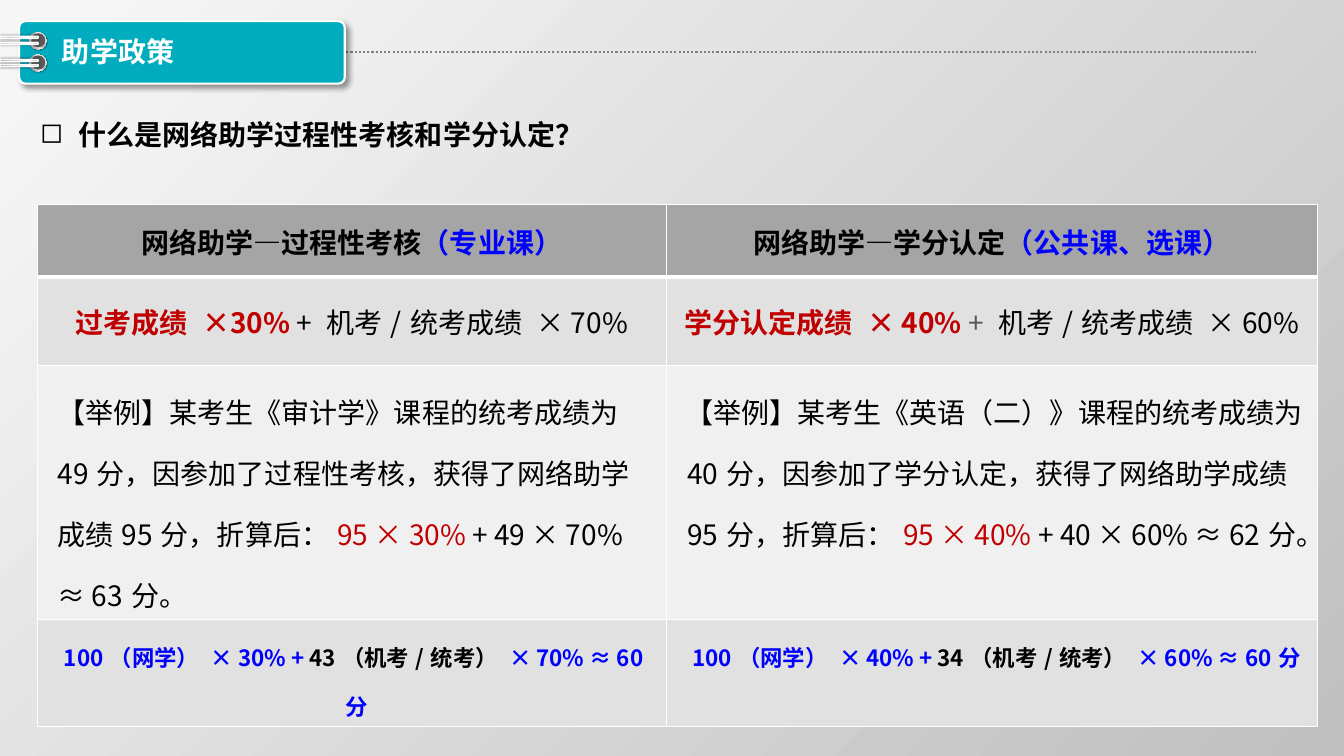
from dataclasses import dataclass

from lxml.etree import SubElement
from pptx import Presentation
from pptx.dml.color import RGBColor
from pptx.enum.dml import MSO_LINE
from pptx.enum.shapes import MSO_CONNECTOR, MSO_SHAPE
from pptx.enum.text import MSO_ANCHOR, PP_ALIGN
from pptx.oxml.ns import qn
from pptx.util import Inches, Pt


@dataclass(frozen=True)
class Theme:
    font: str = "Noto Sans CJK SC"
    body: int = 20
    small: int = 16
    black: str = "000000"
    white: str = "FFFFFF"
    blue: str = "0000FF"
    red: str = "C00000"
    gray: str = "595959"
    rule: str = "808080"
    badge: str = "01ACBE"
    header: str = "A5A5A5"
    dark_row: str = "E1E1E1"
    light_row: str = "F0F0F0"
    backdrop: tuple = ((3, "F7F7F7"), (100, "BFBFBF"))
    ring: tuple = ((0, "FFFFFF"), (17, "A6A6A6"), (35, "F2F2F2"),
                   (55, "A6A6A6"), (75, "F2F2F2"), (100, "A6A6A6"))
    rod: tuple = ((0, "808080"), (23, "A6A6A6"), (52, "D9D9D9"),
                  (74, "FFFFFF"), (100, "A6A6A6"))


def grid(*cells):
    """Lengths on a grid whose columns and rows are a tenth of an inch."""
    return [Inches(cell / 10) for cell in cells]


def add_color(parent, color):
    return SubElement(parent, qn("a:srgbClr"), val=color)


def paint_gradient(fill, owner, stops, angle):
    fill.gradient()
    fill.gradient_angle = 360 - angle
    stop_list = next(owner.iter(qn("a:gsLst")))
    stop_list.clear()
    for position, color in stops:
        add_color(SubElement(stop_list, qn("a:gs"), pos=str(position * 1000)), color)


def add_shadow(shape, blur, distance, angle):
    effects = shape._element.spPr.find(qn("a:effectLst"))
    shadow = SubElement(effects, qn("a:outerShdw"), blurRad=str(Pt(blur)),
                        dist=str(Pt(distance)), dir=str(angle * 60000),
                        algn="ctr", rotWithShape="0")
    SubElement(add_color(shadow, "000000"), qn("a:alpha"), val="40000")


class SlideBuilder:
    def __init__(self, deck, theme):
        self.theme = theme
        self.page = deck.slides.add_slide(deck.slide_layouts[5])
        self.shapes = self.page.shapes

    def background(self):
        paint_gradient(self.page.background.fill, self.page._element,
                       self.theme.backdrop, 45)

    def set_paragraph(self, para, spans, size, align=PP_ALIGN.LEFT, spacing=None,
                      margin=0, indent=0, bullet=None):
        """Fill a paragraph with (text, color, bold) spans."""
        para.alignment = align
        para.font.name, para.font.size = self.theme.font, Pt(size)
        if spacing:
            para.line_spacing = spacing
        properties = para._p.get_or_add_pPr()
        left, first = grid(margin, indent)
        properties.set("marL", str(left))
        properties.set("indent", str(first))
        defaults = properties.find(qn("a:defRPr"))
        SubElement(defaults, qn("a:ea"), typeface=self.theme.font)
        if bullet:
            mark = SubElement(properties, qn("a:buChar"), char=bullet)
            defaults.addprevious(mark)
        for text, color, bold in spans:
            span = para.add_run()
            span.text = text
            span.font.bold = bold
            span.font.color.rgb = RGBColor.from_string(color)

    def title(self, place, text):
        box = self.shapes.title
        box.left, box.top, box.width, box.height = grid(*place)
        frame = box.text_frame
        frame.vertical_anchor = MSO_ANCHOR.MIDDLE
        frame.margin_left = grid(1.55)[0]
        self.set_paragraph(frame.paragraphs[0], [(text, self.theme.white, True)],
                           self.theme.body, spacing=0.9)
        self.shapes._spTree.append(box._element)

    def text(self, place, spans, **style):
        frame = self.shapes.add_textbox(*grid(*place)).text_frame
        frame.word_wrap = True
        self.set_paragraph(frame.paragraphs[0], spans, self.theme.body, **style)

    def dotted_line(self, left, right, top):
        line = self.shapes.add_connector(MSO_CONNECTOR.STRAIGHT,
                                         *grid(left, top, right, top))
        line.line.color.rgb = RGBColor.from_string(self.theme.rule)
        line.line.width = Pt(1.5)
        line.line.dash_style = MSO_LINE.ROUND_DOT
        SubElement(line._element.spPr, qn("a:effectLst"))

    def shape(self, kind, place, paint, angle=0, rotation=0, corner=None,
              outline=0, shadow=None):
        """Draw a preset shape; paint is a color or a tuple of gradient stops."""
        shape = self.shapes.add_shape(kind, *grid(*place))
        shape.rotation = rotation
        shape.shadow.inherit = False
        if corner is not None:
            shape.adjustments[0] = corner
        if isinstance(paint, str):
            shape.fill.solid()
            shape.fill.fore_color.rgb = RGBColor.from_string(paint)
        else:
            paint_gradient(shape.fill, shape._element, paint, angle)
        if outline:
            shape.line.color.rgb = RGBColor.from_string(self.theme.white)
            shape.line.width = Pt(outline)
        else:
            shape.line.fill.background()
        if shadow:
            add_shadow(shape, *shadow)

    def badge(self):
        """The tab behind the title, held by two rings and four rods."""
        self.shape(MSO_SHAPE.ROUNDED_RECTANGLE, (1.9, 2.1, 32.3, 6.2),
                   self.theme.badge, corner=0.1, outline=1.5, shadow=(4, 3, 45))
        for top in (5.4, 3.2):
            self.shape(MSO_SHAPE.OVAL, (2.9, top, 1.7, 1.7), self.theme.ring,
                       angle=45, rotation=270, shadow=(1, 1, 45))
            self.shape(MSO_SHAPE.OVAL, (3.1, top + 0.1, 1.4, 1.4), self.theme.gray)
        for top in (4.6, 4.1, 2.4, 1.8):
            self.shape(MSO_SHAPE.ROUNDED_RECTANGLE, (1.8, top, 0.2, 3.8),
                       self.theme.rod, angle=90, rotation=270, corner=0.5,
                       outline=1, shadow=(2, 0, 0))

    def borders(self, cell, top, bottom):
        properties = cell._tc.get_or_add_tcPr()
        for side, width in (("L", 1), ("R", 1), ("T", top), ("B", bottom)):
            edge = SubElement(properties, qn(f"a:ln{side}"), w=str(Pt(width)))
            add_color(SubElement(edge, qn("a:solidFill")), self.theme.white)

    def table(self, left, top, widths, rows):
        """Each row is (height, fill, size, anchor, styles, cells of spans)."""
        table = self.shapes.add_table(
            len(rows), len(widths),
            *grid(left, top, sum(widths), sum(row[0] for row in rows))).table
        table.first_row = table.horz_banding = False
        for column, width in zip(table.columns, grid(*widths)):
            column.width = width
        for index, (height, fill, size, anchor, styles, cells) in enumerate(rows):
            table.rows[index].height = grid(height)[0]
            for number, (spans, style) in enumerate(zip(cells, styles)):
                cell = table.cell(index, number)
                self.borders(cell, 3 if index == 1 else 1, 3 if index == 0 else 1)
                cell.fill.solid()
                cell.fill.fore_color.rgb = RGBColor.from_string(fill)
                cell.vertical_anchor = anchor
                self.set_paragraph(cell.text_frame.paragraphs[0], spans, size, **style)


def main():
    deck = Presentation()
    deck.slide_width, deck.slide_height = grid(133.33, 75)
    theme = Theme()
    black, blue, red = theme.black, theme.blue, theme.red
    slide = SlideBuilder(deck, theme)
    slide.background()
    slide.dotted_line(33.1, 124.6, 5.2)
    slide.badge()
    slide.title((4.6, 2.3, 33.4, 6), "助学政策")

    centered = [{"align": PP_ALIGN.CENTER}] * 2
    example = [{"spacing": 1.5, "margin": 1},
               {"spacing": 1.5, "margin": 1.1, "indent": -0.2}]
    formula = [{**style, "align": PP_ALIGN.CENTER} for style in example]
    middle, upper = MSO_ANCHOR.MIDDLE, MSO_ANCHOR.TOP
    slide.table(3.7, 20.3, (62.4, 64.6), [
        (7.2, theme.header, theme.body, middle, centered, [
            [("网络助学—过程性考核", black, True), ("（专业课）", blue, True)],
            [("网络助学—学分认定", black, True), ("（公共课、选课）", blue, True)]]),
        (8.8, theme.dark_row, theme.body, middle, centered, [
            [("过考成绩 ×30% ", red, True), ("+ 机考/统考成绩 × 70%", black, False)],
            [("学分认定成绩 × 40% ", red, True), ("+ ", theme.gray, False),
             ("机考/统考成绩 × 60%", black, False)]]),
        (21, theme.light_row, theme.body, upper, example, [
            [("【举例】某考生《审计学》课程的统考成绩为49分，因参加了过程性考核，"
              "获得了网络助学成绩95分，折算后：", black, False),
             ("95 × 30% ", red, False), ("+ 49 × 70% ≈ 63分。", black, False)],
            [("【举例】某考生《英语（二）》课程的统考成绩为40分，因参加了学分认定，"
              "获得了网络助学成绩95分，折算后：", black, False),
             ("95 × 40% ", red, False), ("+ 40 × 60% ≈ 62分。", black, False)]]),
        (6.2, theme.dark_row, theme.small, upper, formula, [
            [("100（网学） × 30% + ", blue, True), ("43（机考/统考）", black, True),
             (" × 70% ≈ 60分", blue, True)],
            [("100（网学） × 40% + ", blue, True), ("34（机考/统考） ", black, True),
             ("× 60% ≈ 60分", blue, True)]]),
    ])
    slide.text((3, 11.2, 92.1, 4.4),
               [("什么是网络助学过程性考核和学分认定？", black, True)],
               margin=3.8, indent=-3.8, bullet="◻")
    deck.save("out.pptx")


if __name__ == "__main__":
    main()
